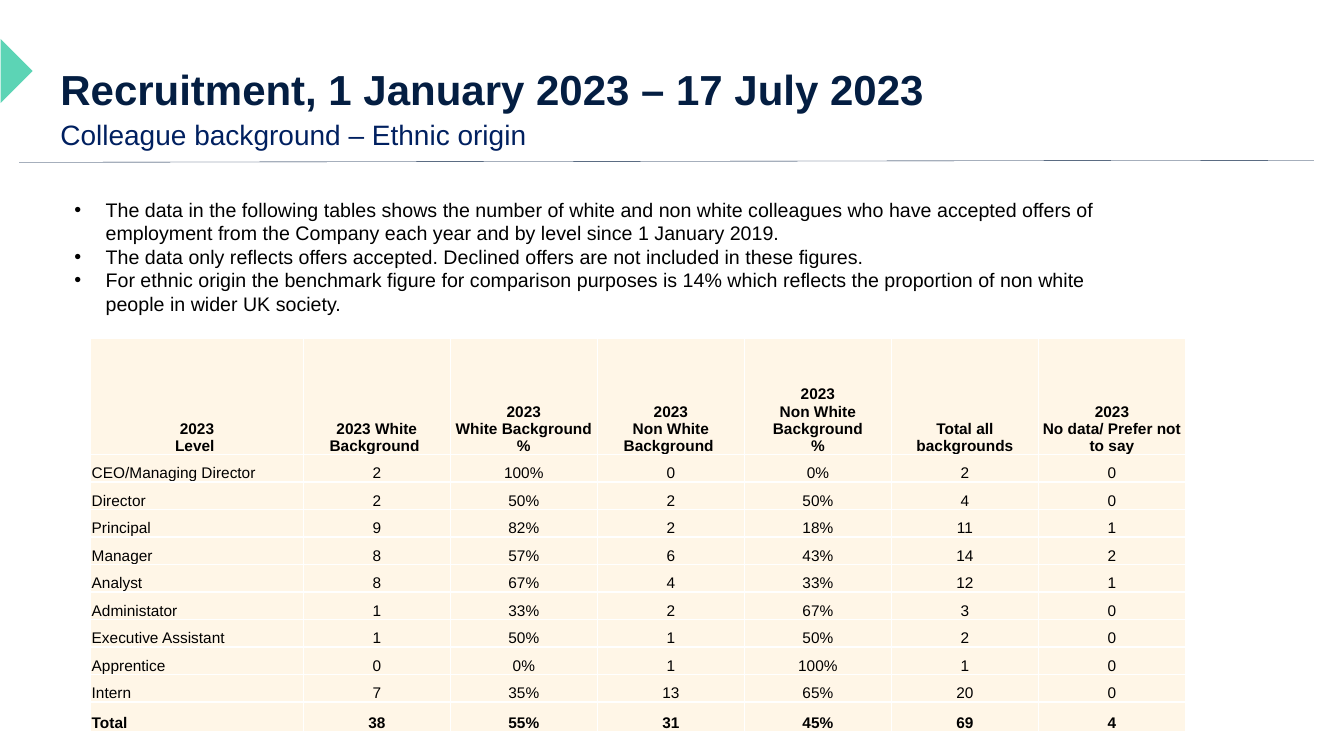
import copy

import lxml.etree
import pptx
import pptx.dml.color
import pptx.enum.shapes
import pptx.enum.text
import pptx.oxml.ns
import pptx.util

qn = pptx.oxml.ns.qn
ALIGN = pptx.enum.text.PP_ALIGN
ANCHOR = pptx.enum.text.MSO_ANCHOR

BULLETS = [
    "The data in the following tables shows the number of white and non white colleagues who have "
    "accepted offers of employment from the Company each year and by level since 1 January 2019.",
    "The data only reflects offers accepted. Declined offers are not included in these figures.",
    "For ethnic origin the benchmark figure for comparison purposes is 14% which reflects the "
    "proportion of non white people in wider UK society.",
]
HEADINGS = [
    "2023\nLevel ", "2023 White Background ", "2023\nWhite Background\n%",
    "2023\nNon White Background ", "2023\nNon White Background\n%",
    "Total all backgrounds", "2023\nNo data/ Prefer not to say",
]
LEVELS = [
    ("CEO/Managing Director", "2", "100%", "0", "0%", "2", "0"),
    ("Director", "2", "50%", "2", "50%", "4", "0"),
    ("Principal", "9", "82%", "2", "18%", "11", "1"),
    ("Manager", "8", "57%", "6", "43%", "14", "2"),
    ("Analyst", "8", "67%", "4", "33%", "12", "1"),
    ("Administator", "1", "33%", "2", "67%", "3", "0"),
    ("Executive Assistant", "1", "50%", "1", "50%", "2", "0"),
    ("Apprentice", "0", "0%", "1", "100%", "1", "0"),
    ("Intern", "7", "35%", "13", "65%", "20", "0"),
    ("Total", "38", "55%", "31", "45%", "69", "4"),
]


def rgb(code):
    return pptx.dml.color.RGBColor.from_string(code)


def write(para, text, size=14, color="000000", bold=False, align=ALIGN.LEFT,
          spacing=None, bullet=None, font="Arial"):
    """Fill one paragraph; a newline in the text becomes a line break."""
    para.text = text
    para.alignment = align
    if spacing:
        para.line_spacing = spacing
    if bullet:
        indent = pptx.util.Inches(0.31)
        props = para._p.get_or_add_pPr()
        props.set("marL", str(indent))
        props.set("indent", str(-indent))
        lxml.etree.SubElement(props, qn("a:buFont"), typeface=font)
        lxml.etree.SubElement(props, qn("a:buChar"), char=bullet)
    for span in para.runs:
        span.font.name = font
        span.font.size = pptx.util.Pt(size)
        span.font.bold = bold
        span.font.color.rgb = rgb(color)
    for line_break in para._p.findall(qn("a:br")):
        line_break.append(copy.deepcopy(para.runs[0]._r.rPr))


class Page:
    """One slide; every length is a percentage of its width or height."""

    navy, blue, mint, cream, white = "041E42", "002060", "5CD4B5", "FFF6E7", "FFFFFF"

    def __init__(self, deck):
        self.deck = deck
        self.shapes = deck.slides.add_slide(deck.slide_layouts[6]).shapes

    def across(self, share):
        return round(self.deck.slide_width * share / 100)

    def down(self, share):
        return round(self.deck.slide_height * share / 100)

    def frame(self, left, top, width, height):
        return self.across(left), self.down(top), self.across(width), self.down(height)

    def marker(self, *place, turn):
        shape = self.shapes.add_shape(
            pptx.enum.shapes.MSO_SHAPE.RIGHT_TRIANGLE, *self.frame(*place))
        shape.rotation = turn
        shape.shadow.inherit = False
        shape.fill.solid()
        shape.fill.fore_color.rgb = rgb(self.mint)
        shape.line.fill.background()

    def rule(self, x1, y1, x2, y2):
        line = self.shapes.add_connector(
            pptx.enum.shapes.MSO_CONNECTOR.STRAIGHT,
            self.across(x1), self.down(y1), self.across(x2), self.down(y2))
        line.line.color.rgb = rgb(self.navy)
        line.line.width = pptx.util.Pt(0.25)
        lxml.etree.SubElement(line._element.spPr, qn("a:effectLst"))

    def text(self, lines, *place, anchor=ANCHOR.TOP, **style):
        frame = self.shapes.add_textbox(*self.frame(*place)).text_frame
        frame.word_wrap = True
        frame.vertical_anchor = anchor
        for index, line in enumerate(lines):
            para = frame.add_paragraph() if index else frame.paragraphs[0]
            write(para, line, **style)

    def table(self, rows, left, top, widths, heights):
        place = self.frame(left, top, sum(widths), sum(heights))
        grid = self.shapes.add_table(len(rows), len(widths), *place).table
        grid.first_row = grid.horz_banding = False
        for column, width in zip(grid.columns, widths):
            column.width = self.across(width)
        for row, height in zip(grid.rows, heights):
            row.height = self.down(height)
        for r, row in enumerate(rows):
            for c, value in enumerate(row):
                self.cell(grid.cell(r, c), value, bold=r in (0, len(rows) - 1),
                          align=ALIGN.LEFT if r and not c else ALIGN.CENTER)

    def cell(self, cell, value, **style):
        cell.margin_left = cell.margin_right = cell.margin_top = pptx.util.Inches(0.01)
        cell.margin_bottom = 0
        cell.vertical_anchor = ANCHOR.BOTTOM
        props = cell._tc.get_or_add_tcPr()
        for side in "LRTB":
            border = lxml.etree.SubElement(
                props, qn(f"a:ln{side}"), w=str(pptx.util.Pt(1)))
            fill = lxml.etree.SubElement(border, qn("a:solidFill"))
            lxml.etree.SubElement(fill, qn("a:srgbClr"), val=self.white)
        cell.fill.solid()
        cell.fill.fore_color.rgb = rgb(self.cream)
        write(cell.text_frame.paragraphs[0], value, size=11, **style)


def main():
    deck = pptx.Presentation()
    deck.slide_width = pptx.util.Inches(13.33)
    deck.slide_height = pptx.util.Inches(7.5)
    page = Page(deck)
    page.marker(-1.65, 6.4, 3.38, 6, turn=225)
    page.rule(1.43, 21.47, 97.75, 21.2)
    page.text(["Recruitment, 1 January 2023 – 17 July 2023"], 3.75, 8, 72.4, 8.4,
              anchor=ANCHOR.MIDDLE, size=30, color=page.navy, bold=True, spacing=0.9)
    page.text(["Colleague background – Ethnic origin"], 3.75, 15.33, 63.5, 5.47,
              size=20, color=page.blue, spacing=0.9)
    page.text(BULLETS, 4.8, 25.47, 80.4, 23.33, bullet="•")
    page.table([HEADINGS] + LEVELS, 6.75, 44.8,
               widths=[15.82] + [10.94] * 6,
               heights=[15.33] + [3.64] * 9 + [3.87])
    deck.save("out.pptx")


if __name__ == "__main__":
    main()
